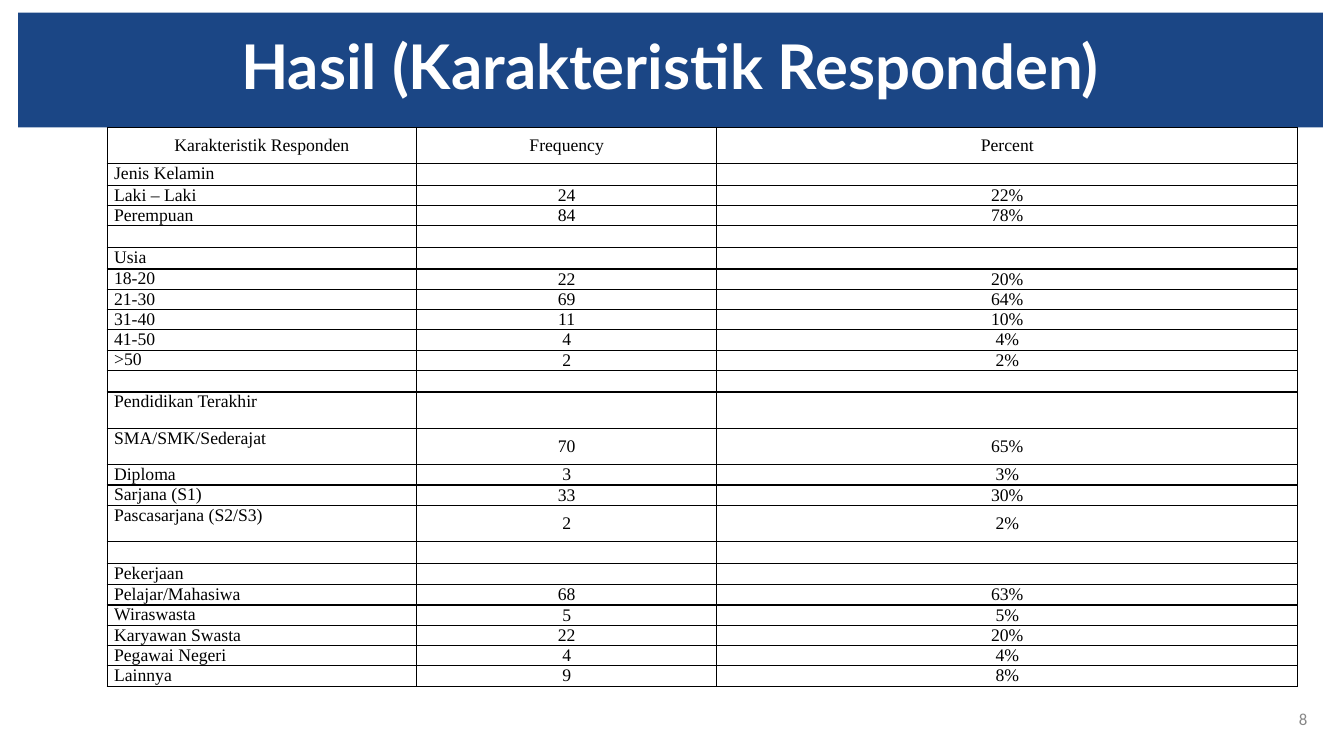
import pptx
import pptx.util
import pptx.dml.color
import pptx.enum.text
import pptx.oxml.ns
import lxml.etree

Pt = pptx.util.Pt
RGBColor = pptx.dml.color.RGBColor
ALIGN = pptx.enum.text.PP_ALIGN
ANCHOR = pptx.enum.text.MSO_ANCHOR
qn = pptx.oxml.ns.qn

NAVY = RGBColor(0x1B, 0x46, 0x85)
WHITE = RGBColor(0xFF, 0xFF, 0xFF)
BLACK = RGBColor(0, 0, 0)
GREY = RGBColor(0x88, 0x88, 0x88)

TEXT_SIZE = 12.6
LOW, TALL = 14.5, 26
COLUMN_WIDTHS = [221, 214.5, 415]
RESPONDENTS = [
    ("Karakteristik Responden", "Frequency", "Percent"),
    ("Jenis Kelamin", "", ""),
    ("Laki – Laki", "24", "22%"),
    ("Perempuan", "84", "78%"),
    ("", "", ""),
    ("Usia", "", ""),
    ("18-20", "22", "20%"),
    ("21-30", "69", "64%"),
    ("31-40", "11", "10%"),
    ("41-50", "4", "4%"),
    (">50", "2", "2%"),
    ("", "", ""),
    ("Pendidikan Terakhir", "", ""),
    ("SMA/SMK/Sederajat", "70", "65%"),
    ("Diploma", "3", "3%"),
    ("Sarjana (S1)", "33", "30%"),
    ("Pascasarjana (S2/S3)", "2", "2%"),
    ("", "", ""),
    ("Pekerjaan", "", ""),
    ("Pelajar/Mahasiwa", "68", "63%"),
    ("Wiraswasta", "5", "5%"),
    ("Karyawan Swasta", "22", "20%"),
    ("Pegawai Negeri", "4", "4%"),
    ("Lainnya", "9", "8%"),
]
TALL_ROWS = {"Karakteristik Responden", "Pendidikan Terakhir",
             "SMA/SMK/Sederajat", "Pascasarjana (S2/S3)"}


def write(frame, text, font="Times New Roman", size=TEXT_SIZE, color=BLACK,
          bold=False, align=ALIGN.LEFT):
    para = frame.paragraphs[0]
    para.alignment = align
    if not text:
        lxml.etree.SubElement(para._p, qn("a:endParaRPr"), sz=str(int(size * 100)))
        return para
    span = para.add_run()
    span.text = text
    span.font.name = font
    span.font.size = Pt(size)
    span.font.bold = bold
    span.font.color.rgb = color
    return para


def add_borders(cell):
    properties = cell._tc.get_or_add_tcPr()
    for side in ("lnL", "lnR", "lnT", "lnB"):
        line = lxml.etree.SubElement(properties, qn("a:" + side), w=str(Pt(1)))
        fill = lxml.etree.SubElement(line, qn("a:solidFill"))
        lxml.etree.SubElement(fill, qn("a:srgbClr"), val=str(BLACK))


deck = pptx.Presentation()
deck.slide_width = Pt(960)
deck.slide_height = Pt(540)
page = deck.slides.add_slide(deck.slide_layouts[5])

title = page.shapes.title
title.left, title.top, title.width, title.height = Pt(13), Pt(9), Pt(932), Pt(82)
title.fill.solid()
title.fill.fore_color.rgb = NAVY
title.text_frame.auto_size = pptx.enum.text.MSO_AUTO_SIZE.NONE
title.text_frame.vertical_anchor = ANCHOR.MIDDLE
heading = write(title.text_frame, "Hasil (Karakteristik Responden)", font="Lato",
                size=44, color=WHITE, bold=True, align=ALIGN.CENTER)
heading.line_spacing = 0.9

heights = [TALL if row[0] in TALL_ROWS else LOW for row in RESPONDENTS]
table = page.shapes.add_table(len(RESPONDENTS), len(COLUMN_WIDTHS), Pt(76.5), Pt(91),
                              Pt(sum(COLUMN_WIDTHS)), Pt(sum(heights))).table
table.first_row = False
table.horz_banding = False
for column, width in zip(table.columns, COLUMN_WIDTHS):
    column.width = Pt(width)

for row_index, (values, height) in enumerate(zip(RESPONDENTS, heights)):
    table.rows[row_index].height = Pt(height)
    for column_index, value in enumerate(values):
        cell = table.cell(row_index, column_index)
        centred = row_index == 0 or column_index > 0
        cell.margin_left = cell.margin_right = Pt(5)
        cell.margin_top = cell.margin_bottom = Pt(0)
        cell.vertical_anchor = ANCHOR.MIDDLE if centred else ANCHOR.TOP
        add_borders(cell)
        cell.fill.background()
        write(cell.text_frame, value, align=ALIGN.CENTER if centred else ALIGN.LEFT)

number_box = page.shapes.add_textbox(Pt(900), Pt(499), Pt(41), Pt(29))
number_box.text_frame.word_wrap = True
number_box.text_frame.vertical_anchor = ANCHOR.MIDDLE
write(number_box.text_frame, "8", font="Calibri", size=12, color=GREY, align=ALIGN.RIGHT)

deck.save("out.pptx")
